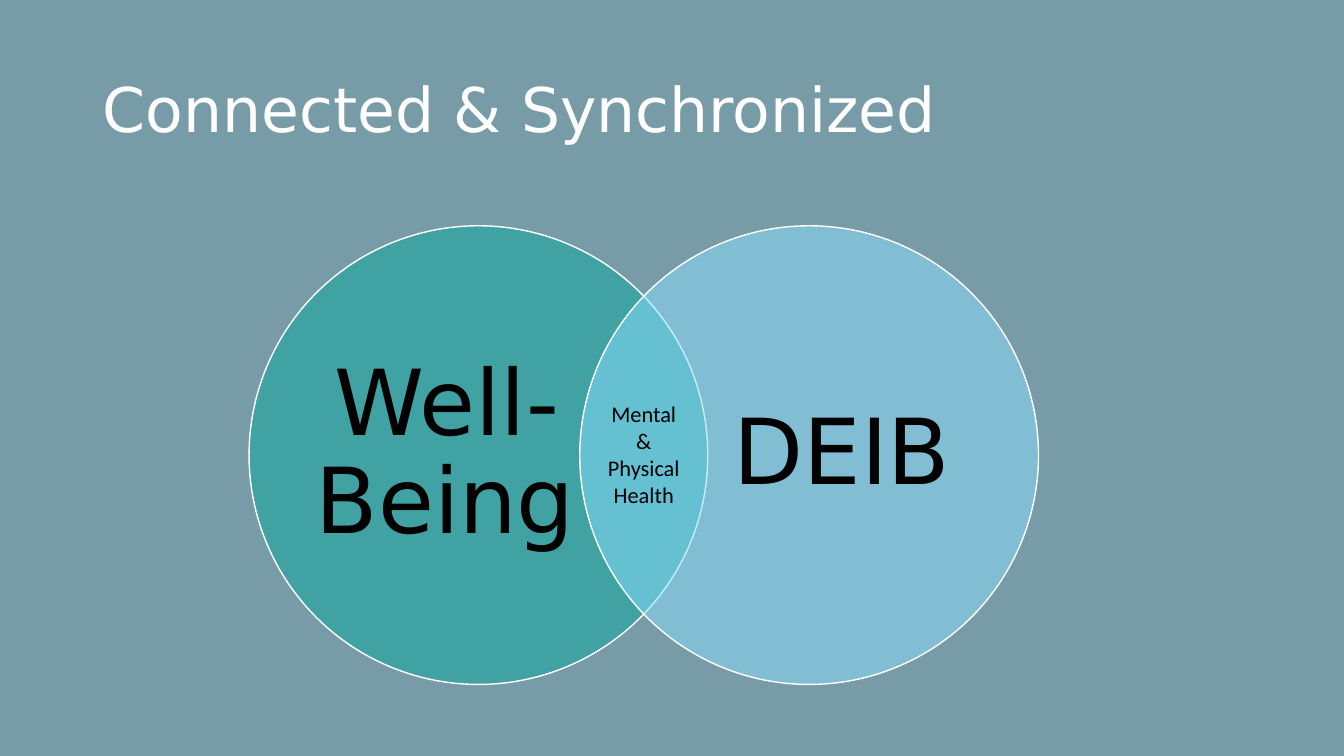
from collections import namedtuple
from dataclasses import dataclass

from lxml.etree import SubElement
from pptx import Presentation
from pptx.dml.color import RGBColor
from pptx.enum.shapes import MSO_SHAPE as Preset
from pptx.enum.text import MSO_ANCHOR as Anchor, PP_ALIGN as Align
from pptx.oxml.ns import qn
from pptx.util import Inches, Pt

Box = namedtuple("Box", "left top width height")


@dataclass(frozen=True)
class Theme:
    background: str = "789BA8"
    light: str = "FFFFFF"
    dark: str = "000000"
    teal: str = "0AAAA0"
    sky: str = "8ADFFF"
    opacity: int = 50
    heading_font: str = "DejaVu Sans"
    body_font: str = "Calibri"
    title_size: int = 44
    circle_size: int = 65
    overlap_size: int = 16


THEME = Theme()
WIDTH, HEIGHT = 13.33, 7.5
TITLE_BOX = Box(0.92, 0.39, 11.5, 1.45)
VENN_BOX = Box(2.47, 2.24, 7.83, 4.55)
LABEL_INSET, LABEL_WIDTH, LABEL_HEIGHT = 0.14, 0.576, 0.763
OVERLAP_WIDTH, OVERLAP_HEIGHT = 0.255, 0.26


def color(value):
    return RGBColor.from_string(value)


def apply_format(target, values):
    for name, value in values.items():
        setattr(target, name, value)


def add_text(page, box, lines, font, size, ink, frame_format, para_format):
    frame = page.shapes.add_textbox(*map(Inches, box)).text_frame
    apply_format(frame, {"word_wrap": True, **frame_format})
    for index, line in enumerate(lines):
        para = frame.paragraphs[0] if index == 0 else frame.add_paragraph()
        apply_format(para, para_format)
        span = para.add_run()
        span.text = line
        apply_format(span.font, {"name": font, "size": Pt(size)})
        span.font.color.rgb = color(ink)


def add_title(page, box):
    add_text(page, box, ["Connected & Synchronized"], THEME.heading_font,
             THEME.title_size, THEME.light,
             {"vertical_anchor": Anchor.MIDDLE}, {"line_spacing": 0.9})


def add_circle(page, box, fill):
    circle = page.shapes.add_shape(Preset.OVAL, *map(Inches, box))
    circle.shadow.inherit = False
    circle.fill.solid()
    circle.fill.fore_color.rgb = color(fill)
    tint = circle.fill._xPr.find(qn("a:solidFill"))[0]
    SubElement(tint, qn("a:alpha")).set("val", str(THEME.opacity * 1000))
    circle.line.color.rgb = color(THEME.light)
    circle.line.width = Pt(1)


def add_venn(page, box):
    diameter = box.height
    margins = ("margin_left", "margin_top", "margin_right", "margin_bottom")
    label_format = {"vertical_anchor": Anchor.MIDDLE, **dict.fromkeys(margins, 0)}
    sides = (
        ("Well-Being", THEME.teal, 0, LABEL_INSET),
        ("DEIB", THEME.sky, box.width - diameter, 1 - LABEL_INSET - LABEL_WIDTH),
    )
    for label, fill, offset, inset in sides:
        left = box.left + offset
        add_circle(page, Box(left, box.top, diameter, diameter), fill)
        label_box = Box(left + inset * diameter,
                        box.top + (1 - LABEL_HEIGHT) / 2 * diameter,
                        LABEL_WIDTH * diameter, LABEL_HEIGHT * diameter)
        add_text(page, label_box, [label], THEME.heading_font,
                 THEME.circle_size, THEME.dark, label_format,
                 {"alignment": Align.CENTER, "line_spacing": 0.9})

    width, height = OVERLAP_WIDTH * diameter, OVERLAP_HEIGHT * diameter
    overlap_box = Box(box.left + (box.width - width) / 2,
                      box.top + (box.height - height) / 2, width, height)
    add_text(page, overlap_box, ["Mental", "&", "Physical Health"],
             THEME.body_font, THEME.overlap_size, THEME.dark,
             {"vertical_anchor": Anchor.TOP}, {"alignment": Align.CENTER})


def main():
    deck = Presentation()
    apply_format(deck, {"slide_width": Inches(WIDTH), "slide_height": Inches(HEIGHT)})
    page = deck.slides.add_slide(deck.slide_layouts[6])
    page.background.fill.solid()
    page.background.fill.fore_color.rgb = color(THEME.background)
    add_title(page, TITLE_BOX)
    add_venn(page, VENN_BOX)
    deck.save("out.pptx")


if __name__ == "__main__":
    main()
